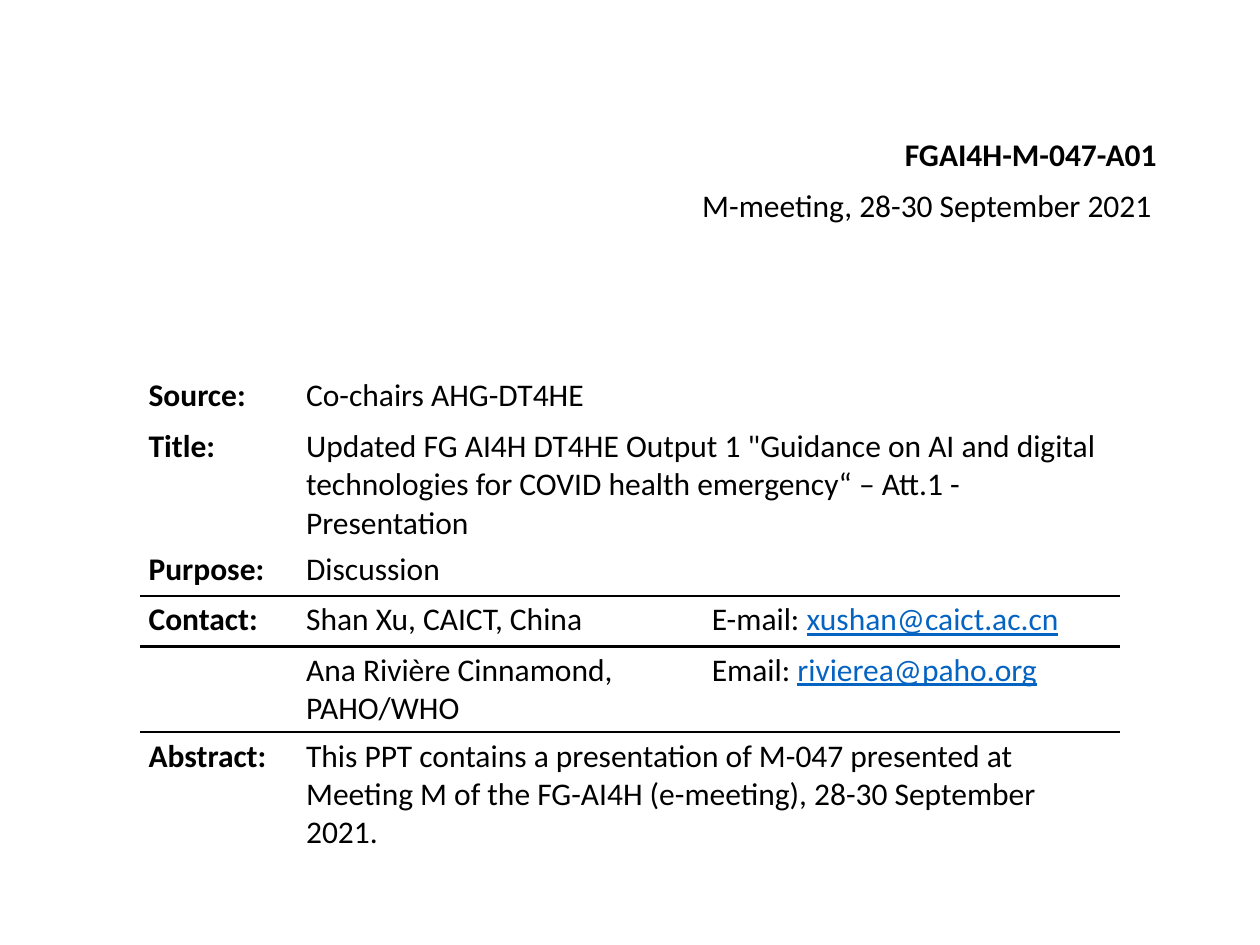
import dataclasses

import lxml.etree
import pptx
import pptx.dml.color
import pptx.enum.text
import pptx.oxml.ns
import pptx.util

Inches = pptx.util.Inches


@dataclasses.dataclass
class Theme:
    font: str = "Calibri"
    size: float = 18
    text: str = "000000"
    link: str = "0563C1"
    rule: str = "000000"
    rule_width: float = 1.5
    table_style: str = "{2D5ABB26-0587-4C30-8999-92F81FD0307C}"  # no style, no grid


class CoverPage:
    def __init__(self, deck, theme):
        self.theme = theme
        self.page = deck.slides.add_slide(deck.slide_layouts[6])

    def add_span(self, para, text, bold=False, link=False):
        span = para.add_run()
        span.text = text
        formats = {"name": self.theme.font, "size": pptx.util.Pt(self.theme.size),
                   "bold": bold, "underline": link}
        for name, value in formats.items():
            setattr(span.font, name, value)
        color = self.theme.link if link else self.theme.text
        span.font.color.rgb = pptx.dml.color.RGBColor.from_string(color)

    def add_heading(self, text, left, top, width, height, bold=False):
        box = self.page.shapes.add_textbox(*map(Inches, (left, top, width, height)))
        box.text_frame.word_wrap = False
        box.text_frame.auto_size = pptx.enum.text.MSO_AUTO_SIZE.SHAPE_TO_FIT_TEXT
        para = box.text_frame.paragraphs[0]
        para.alignment = pptx.enum.text.PP_ALIGN.RIGHT
        self.add_span(para, text, bold)

    def add_rules(self, cell, sides):
        """Draw the named cell edges, where T is top and B is bottom."""
        qn = pptx.oxml.ns.qn
        properties = cell._tc.get_or_add_tcPr()
        for index, side in enumerate(sides):
            line = lxml.etree.Element(qn(f"a:ln{side}"),
                                      w=str(pptx.util.Pt(self.theme.rule_width)))
            fill = lxml.etree.SubElement(line, qn("a:solidFill"))
            lxml.etree.SubElement(fill, qn("a:srgbClr"), val=self.theme.rule)
            properties.insert(index, line)

    def add_cell(self, cell, text, bold, sides):
        margins = {"margin_left": 0.07, "margin_right": 0.07,
                   "margin_top": 0.04, "margin_bottom": 0.04}
        for name, value in margins.items():
            setattr(cell, name, Inches(value))
        cell.fill.background()
        self.add_rules(cell, sides)
        para = cell.text_frame.paragraphs[0]
        # A pair holds a caption and an address
        caption, address = text if isinstance(text, tuple) else (text, "")
        if caption:
            self.add_span(para, caption, bold)
        if address:
            self.add_span(para, address, link=True)

    def add_details(self, rows, left, top, widths, heights):
        frame = self.page.shapes.add_table(
            len(rows), len(widths), Inches(left), Inches(top),
            Inches(sum(widths)), Inches(sum(heights)))
        table = frame.table
        table.first_row = table.horz_banding = False
        style = table._tbl.tblPr.find(pptx.oxml.ns.qn("a:tableStyleId"))
        style.text = self.theme.table_style
        for column, width in zip(table.columns, widths):
            column.width = Inches(width)
        for index, (texts, sides) in enumerate(rows):
            table.rows[index].height = Inches(heights[index])
            if len(texts) < len(widths):
                table.cell(index, 1).merge(table.cell(index, len(widths) - 1))
            texts = texts + [""] * (len(widths) - len(texts))
            for column, text in enumerate(texts):
                self.add_cell(table.cell(index, column), text, column == 0, sides)


def main():
    deck = pptx.Presentation()
    deck.slide_width, deck.slide_height = Inches(10), Inches(7.5)
    cover = CoverPage(deck, Theme())

    # Document number and meeting
    cover.add_heading("FGAI4H-M-047-A01", 7.05, 1.02, 2.23, 0.4, bold=True)
    cover.add_heading("M-meeting, 28-30 September 2021", 5.43, 1.43, 3.81, 0.4)

    # Document details: cell texts and ruled edges of each row
    rows = [
        (["Source:", "Co-chairs AHG-DT4HE"], ""),
        (["Title:", 'Updated FG AI4H DT4HE Output 1 "Guidance on AI and digital '
          "technologies for COVID health emergency“ – Att.1 - Presentation"], ""),
        (["Purpose:", "Discussion"], "B"),
        (["Contact:", "Shan Xu, CAICT, China",
          ("E-mail: ", "xushan@caict.ac.cn")], "TB"),
        (["", "Ana Rivière Cinnamond, PAHO/WHO",
          ("Email: ", "rivierea@paho.org")], "TB"),
        (["Abstract:", "This PPT contains a presentation of M-047 presented at "
          "Meeting M of the FG-AI4H (e-meeting), 28-30 September 2021."], "T"),
    ]
    cover.add_details(rows, 1.11, 2.95, widths=[1.25, 3.22, 3.31],
                      heights=[0.4] * len(rows))

    deck.save("out.pptx")


if __name__ == "__main__":
    main()
